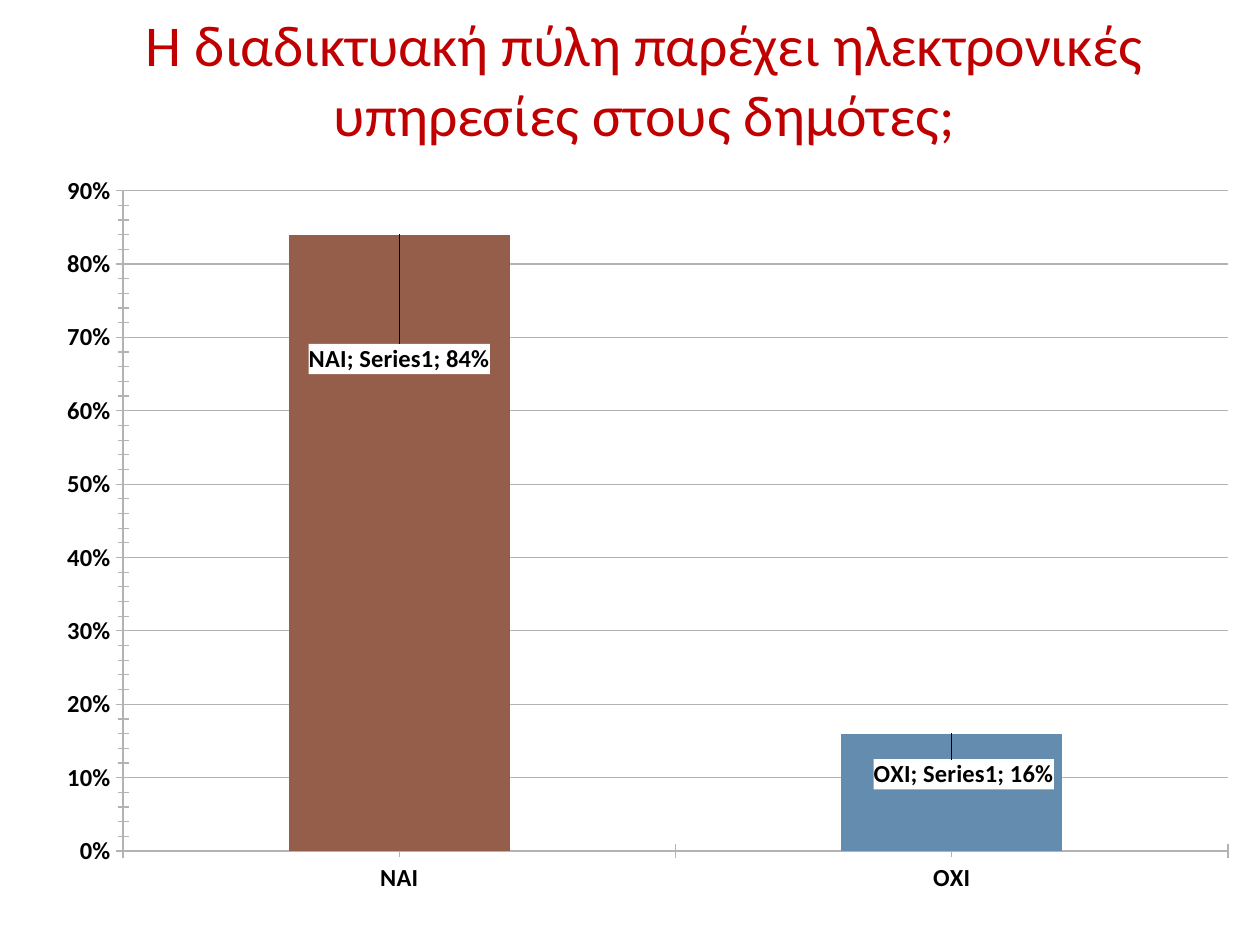
from dataclasses import dataclass

from lxml import etree
from pptx import Presentation
from pptx.chart.data import CategoryChartData
from pptx.dml.color import RGBColor
from pptx.enum.chart import XL_CHART_TYPE, XL_TICK_MARK
from pptx.enum.text import MSO_ANCHOR, PP_ALIGN
from pptx.oxml import parse_xml
from pptx.oxml.ns import qn
from pptx.util import Emu, Pt

COLUMNS = XL_CHART_TYPE.COLUMN_CLUSTERED
CROSS = XL_TICK_MARK.CROSS
CENTER = PP_ALIGN.CENTER
MIDDLE = MSO_ANCHOR.MIDDLE

EMU_PER_PX = 914400 / 126
CHART_NS = "http://schemas.openxmlformats.org/drawingml/2006/chart"
DRAWING_NS = "http://schemas.openxmlformats.org/drawingml/2006/main"


@dataclass(frozen=True)
class Theme:
    font: str = "Calibri"
    title: str = "C00000"
    text: str = "000000"
    paper: str = "FFFFFF"
    rule: str = "B3B3B3"
    title_size: int = 33
    chart_size: int = 14


@dataclass(frozen=True)
class Box:
    left: int
    top: int
    width: int
    height: int


@dataclass(frozen=True)
class Answer:
    name: str
    share: float
    color: str
    label_dx: float  # label shift, as a fraction of the chart
    label_dy: float


THEME = Theme()
TITLE = "Η διαδικτυακή πύλη παρέχει ηλεκτρονικές υπηρεσίες στους δημότες;"
TITLE_BOX = Box(29, 10, 1231, 137)
CHART_BOX = Box(39, 168, 1201, 759)
ANSWERS = [
    Answer("ΝΑΙ", 0.84, "955E4B", 0, 0.19),
    Answer("ΟΧΙ", 0.16, "638CAE", 0.01, 0.08),
]


def px(value: int) -> Emu:
    return Emu(round(value * EMU_PER_PX))


def rgb(color: str) -> RGBColor:
    return RGBColor.from_string(color)


def layout_xml(x: float, y: float, extra: str = "") -> str:
    return (f'<c:layout xmlns:c="{CHART_NS}"><c:manualLayout>{extra}'
            f'<c:x val="{x}"/><c:y val="{y}"/></c:manualLayout></c:layout>')


def add_title(slide, box: Box) -> None:
    shape = slide.shapes.title
    shape.left, shape.top = px(box.left), px(box.top)
    shape.width, shape.height = px(box.width), px(box.height)
    frame = shape.text_frame
    frame.word_wrap = True
    frame.vertical_anchor = MIDDLE
    paragraph = frame.paragraphs[0]
    paragraph.alignment = CENTER
    run = paragraph.add_run()
    run.text = TITLE
    run.font.name = THEME.font
    run.font.size = Pt(THEME.title_size)
    run.font.color.rgb = rgb(THEME.title)


def style_axis(axis) -> None:
    axis.visible = True
    axis.major_tick_mark = axis.minor_tick_mark = CROSS
    axis.format.line.color.rgb = rgb(THEME.rule)


def add_labels(series) -> None:
    """Label each column with category, series and value, moved below its top."""
    shown = (
        f'<c:numFmt formatCode="0%" sourceLinked="0"/>'
        f'<c:spPr><a:solidFill><a:srgbClr val="{THEME.paper}"/></a:solidFill></c:spPr>'
        f'<c:txPr><a:bodyPr/><a:p><a:pPr><a:defRPr sz="{THEME.chart_size * 100}" b="1">'
        f'<a:solidFill><a:srgbClr val="{THEME.text}"/></a:solidFill>'
        f'<a:latin typeface="{THEME.font}"/></a:defRPr></a:pPr>'
        f'<a:endParaRPr lang="el-GR"/></a:p></c:txPr><c:dLblPos val="outEnd"/>'
        '<c:showLegendKey val="0"/><c:showVal val="1"/><c:showCatName val="1"/>'
        '<c:showSerName val="1"/><c:showPercent val="0"/><c:showBubbleSize val="0"/>'
        '<c:separator>; </c:separator>'
    )
    points = "".join(
        f'<c:dLbl><c:idx val="{index}"/>{layout_xml(answer.label_dx, answer.label_dy)}'
        f'{shown}</c:dLbl>'
        for index, answer in enumerate(ANSWERS)
    )
    labels = parse_xml(
        f'<c:dLbls xmlns:c="{CHART_NS}" xmlns:a="{DRAWING_NS}">{points}{shown}'
        '<c:showLeaderLines val="1"/></c:dLbls>'
    )
    series._element.find(qn("c:cat")).addprevious(labels)


def place_plot(chart) -> None:
    """Fix the inner plot area inside the chart."""
    plot_area = chart._chartSpace.find(".//" + qn("c:plotArea"))
    for old_layout in plot_area.findall(qn("c:layout")):
        plot_area.remove(old_layout)
    layout = parse_xml(layout_xml(0.07, 0.03, '<c:layoutTarget val="inner"/>'
                                  '<c:xMode val="edge"/><c:yMode val="edge"/>'))
    manual = layout[0]
    for tag, value in (("c:w", "0.92"), ("c:h", "0.87")):
        etree.SubElement(manual, qn(tag)).set("val", value)
    plot_area.insert(0, layout)


def add_answer_chart(slide, box: Box) -> None:
    data = CategoryChartData(number_format="0%")
    data.categories = [answer.name for answer in ANSWERS]
    data.add_series("Series1", [answer.share for answer in ANSWERS])
    chart = slide.shapes.add_chart(
        COLUMNS, px(box.left), px(box.top), px(box.width), px(box.height), data).chart
    chart.has_legend = chart.has_title = False
    chart.font.name = THEME.font
    chart.font.size = Pt(THEME.chart_size)
    chart.font.bold = True
    chart.font.color.rgb = rgb(THEME.text)

    # Axes
    style_axis(chart.category_axis)
    value_axis = chart.value_axis
    style_axis(value_axis)
    value_axis.minimum_scale, value_axis.maximum_scale = 0, 0.9
    value_axis.major_unit, value_axis.minor_unit = 0.1, 0.02
    value_axis.tick_labels.number_format = "0%"
    value_axis.tick_labels.number_format_is_linked = False
    value_axis.has_major_gridlines = True
    value_axis.major_gridlines.format.line.color.rgb = rgb(THEME.rule)

    # Columns
    plot = chart.plots[0]
    plot.vary_by_categories = False
    plot.gap_width = 150
    series = plot.series[0]
    for index, answer in enumerate(ANSWERS):
        fill = series.points[index].format.fill
        fill.solid()
        fill.fore_color.rgb = rgb(answer.color)
    add_labels(series)
    place_plot(chart)


def main() -> None:
    presentation = Presentation()
    presentation.slide_width, presentation.slide_height = px(1260), px(945)
    slide = presentation.slides.add_slide(presentation.slide_layouts[5])
    add_title(slide, TITLE_BOX)
    add_answer_chart(slide, CHART_BOX)
    presentation.save("out.pptx")


if __name__ == "__main__":
    main()
